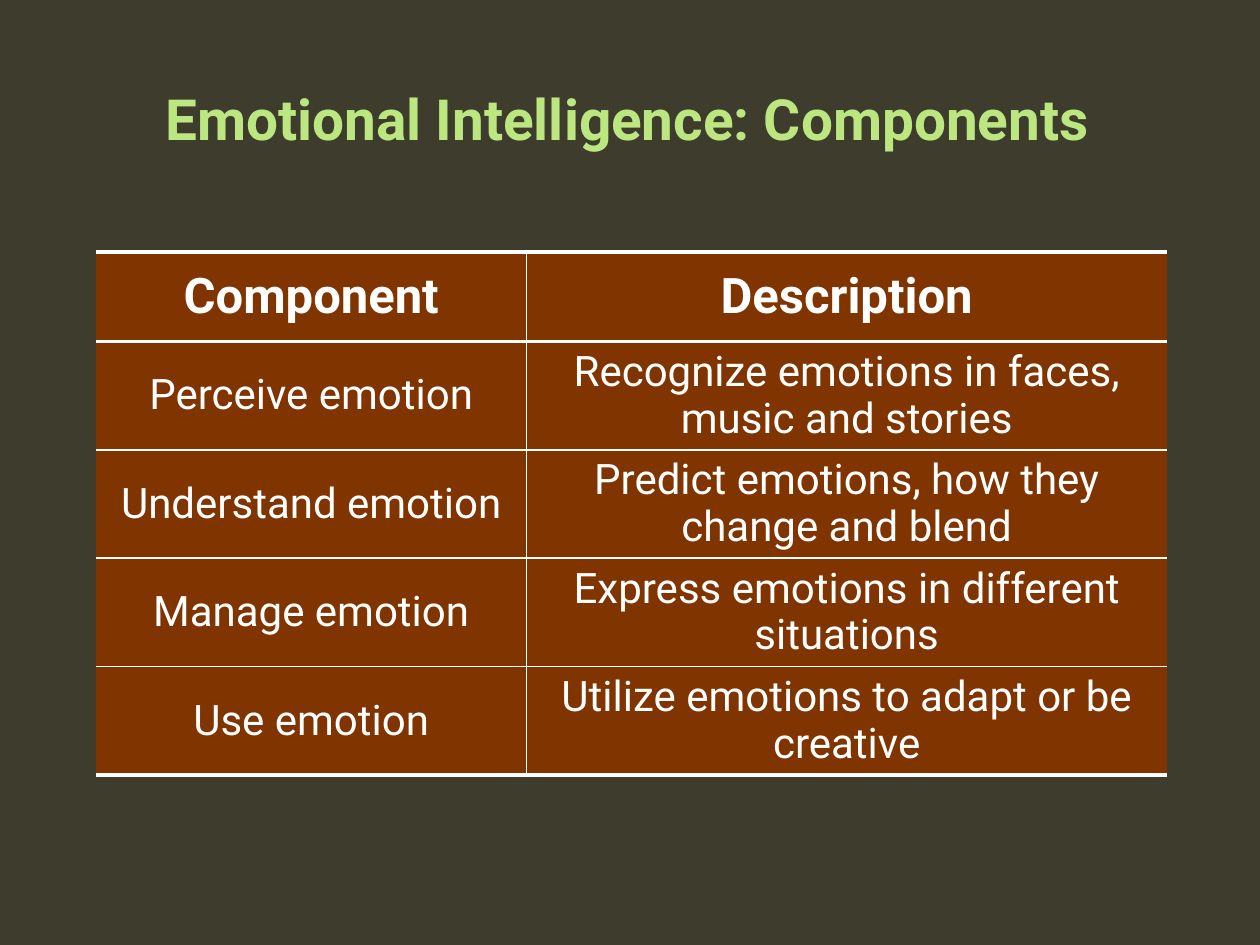
from lxml.etree import SubElement
from pptx import Presentation
from pptx.dml.color import RGBColor
from pptx.enum.text import MSO_ANCHOR, PP_ALIGN
from pptx.oxml.ns import qn
from pptx.util import Inches, Pt

TITLE = "Emotional Intelligence: Components"
ROWS = [
    ("Component", "Description"),
    ("Perceive emotion", "Recognize emotions in faces, music and stories"),
    ("Understand emotion", "Predict emotions, how they change and blend"),
    ("Manage emotion", "Express emotions in different situations"),
    ("Use emotion", "Utilize emotions to adapt or be creative"),
]
COLORS = {"background": "3E3D2D", "title": "BCE780", "cell": "803400", "text": "FFFFFF"}
FONT = "Roboto"
COLUMN_WIDTHS = (3.42, 5.08)
HEADER_HEIGHT, BODY_HEIGHT = 0.71, 0.84
THICK, THIN = 2.25, 1


def color(name):
    return RGBColor.from_string(COLORS[name])


def write(text_frame, text, size, color_name, bold):
    paragraph = text_frame.paragraphs[0]
    paragraph.alignment = PP_ALIGN.CENTER
    run = paragraph.add_run()
    run.text = text
    font = run.font
    font.name, font.size, font.bold = FONT, Pt(size), bold
    font.color.rgb = color(color_name)
    return paragraph


def add_border(cell, side, width):
    """Draw one side of a cell; a width of 0 leaves that side open."""
    line = SubElement(cell._tc.get_or_add_tcPr(), qn(f"a:ln{side}"), w=str(Pt(width)))
    if width:
        fill = SubElement(line, qn("a:solidFill"))
        SubElement(fill, qn("a:srgbClr"), val=COLORS["text"])
    else:
        SubElement(line, qn("a:noFill"))


def add_title(slide):
    box = slide.shapes.add_textbox(Inches(0.73), Inches(0.31), Inches(8.5), Inches(1.25))
    frame = box.text_frame
    frame.word_wrap = True
    frame.vertical_anchor = MSO_ANCHOR.MIDDLE
    write(frame, TITLE, 32.4, "title", True)


def add_components_table(slide):
    heights = [HEADER_HEIGHT] + [BODY_HEIGHT] * (len(ROWS) - 1)
    table = slide.shapes.add_table(
        len(ROWS), len(COLUMN_WIDTHS), Inches(0.76), Inches(2),
        Inches(sum(COLUMN_WIDTHS)), Inches(sum(heights)),
    ).table
    table.first_row = table.horz_banding = False
    for column, width in zip(table.columns, COLUMN_WIDTHS):
        column.width = Inches(width)
    for row, height in zip(table.rows, heights):
        row.height = Inches(height)

    # Horizontal rules from top to bottom: thick around the header and at the end
    rules = [THICK, THICK] + [THIN] * (len(ROWS) - 2) + [THICK]
    verticals = [0] + [THIN] * (len(COLUMN_WIDTHS) - 1) + [0]
    for r, texts in enumerate(ROWS):
        is_header = r == 0
        for c, text in enumerate(texts):
            cell = table.cell(r, c)
            cell.vertical_anchor = MSO_ANCHOR.MIDDLE
            widths = (verticals[c], verticals[c + 1], rules[r], rules[r + 1])
            for side, width in zip("LRTB", widths):
                add_border(cell, side, width)
            cell.fill.solid()
            cell.fill.fore_color.rgb = color("cell")
            paragraph = write(cell.text_frame, text, 28 if is_header else 24, "text", is_header)
            if c == 1 and not is_header:
                paragraph.line_spacing = 0.95


def main():
    presentation = Presentation()
    presentation.slide_width, presentation.slide_height = Inches(10), Inches(7.5)
    slide = presentation.slides.add_slide(presentation.slide_layouts[6])
    slide.background.fill.solid()
    slide.background.fill.fore_color.rgb = color("background")
    add_title(slide)
    add_components_table(slide)
    presentation.save("out.pptx")


if __name__ == "__main__":
    main()
